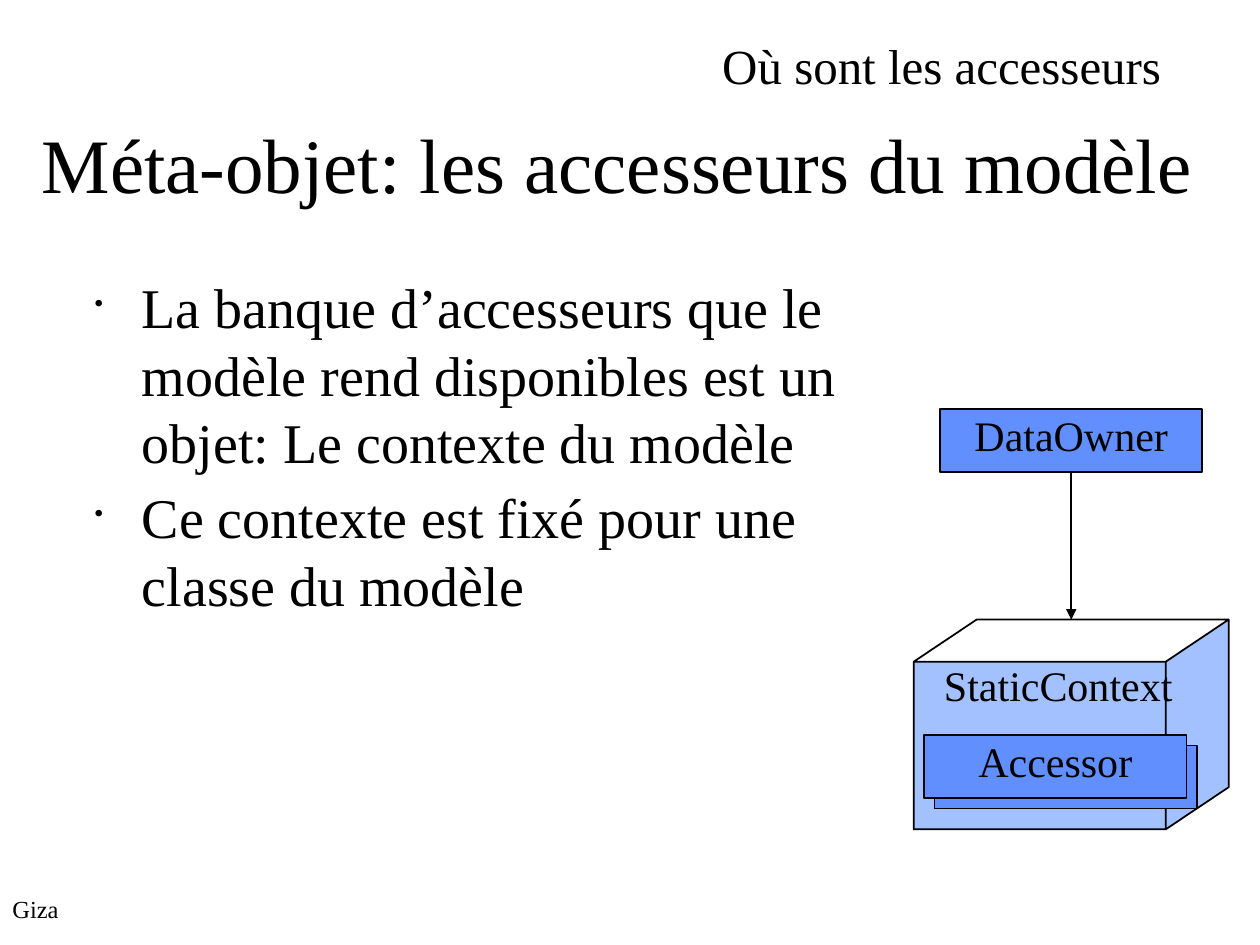
from dataclasses import dataclass

from lxml import etree
from pptx import Presentation
from pptx.dml.color import RGBColor
from pptx.enum.shapes import MSO_CONNECTOR, MSO_SHAPE
from pptx.enum.text import MSO_ANCHOR, PP_ALIGN
from pptx.oxml.ns import qn
from pptx.util import Cm, Pt

RECTANGLE = MSO_SHAPE.RECTANGLE
STRAIGHT = MSO_CONNECTOR.STRAIGHT
TOP = MSO_ANCHOR.TOP
LEFT, CENTER = PP_ALIGN.LEFT, PP_ALIGN.CENTER
BOTTOM_SIDE = 2


@dataclass(frozen=True)
class Theme:
    """Colours, font and type sizes of the slide."""
    font: str = "Times New Roman"
    ink: RGBColor = RGBColor(0x00, 0x00, 0x00)
    box_fill: RGBColor = RGBColor(0x61, 0x8F, 0xFD)
    cube_fill: RGBColor = RGBColor(0xA2, 0xC1, 0xFE)
    line: float = 1
    title: float = 44
    body: float = 32
    heading: float = 28
    label: float = 24
    footer: float = 14


THEME = Theme()
BOX_WIDTH, BOX_HEIGHT = 5.29, 1.27
BULLETS = (
    "La banque d’accesseurs que le modèle rend disponibles est un objet: Le contexte du modèle",
    "Ce contexte est fixé pour une classe du modèle",
)


def write_text(shape, lines, size, align=LEFT):
    """Fill a shape with paragraphs in the theme font."""
    frame = shape.text_frame
    frame.word_wrap = True
    frame.vertical_anchor = TOP
    frame.margin_left = frame.margin_right = 0
    frame.margin_top = frame.margin_bottom = 0
    frame.text = "\n".join(lines)
    for para in frame.paragraphs:
        para.alignment = align
        for span in para.runs:
            span.font.name = THEME.font
            span.font.size = Pt(size)
            span.font.color.rgb = THEME.ink


def add_text(page, left, top, width, height, lines, size):
    """Add a text box and return it."""
    box = page.shapes.add_textbox(Cm(left), Cm(top), Cm(width), Cm(height))
    write_text(box, lines, size)
    return box


def add_bullets(page, left, top, width, height, lines):
    """Add a bulleted list with hanging indents."""
    box = add_text(page, left, top, width, height, lines, THEME.body)
    for para in box.text_frame.paragraphs:
        para.space_before = Pt(4.8)
        properties = para._p.get_or_add_pPr()
        properties.set("marL", str(Cm(0.95)))
        properties.set("indent", str(-Cm(0.95)))
        colour = etree.SubElement(properties, qn("a:buClr"))
        etree.SubElement(colour, qn("a:srgbClr"), val=str(THEME.ink))
        etree.SubElement(properties, qn("a:buSzPct"), val="45000")
        etree.SubElement(properties, qn("a:buChar"), char="•")


def paint(shape, fill):
    """Give a shape a flat fill and the theme outline."""
    shape.shadow.inherit = False
    shape.fill.solid()
    shape.fill.fore_color.rgb = fill
    shape.line.color.rgb = THEME.ink
    shape.line.width = Pt(THEME.line)


def add_box(page, left, top, label=""):
    """Add a class box with an optional centred label."""
    box = page.shapes.add_shape(RECTANGLE, Cm(left), Cm(top), Cm(BOX_WIDTH), Cm(BOX_HEIGHT))
    paint(box, THEME.box_fill)
    if label:
        write_text(box, [label], THEME.label, CENTER)
    return box


def add_cube(page, left, top, width, height, depth, rise):
    """Draw a cube with filled front and side and an open top face."""
    right, bottom = left + width, top + height
    edge, front = right - depth, top + rise
    points = [
        (left, bottom), (edge, bottom), (right, bottom - rise), (right, top),
        (edge, front), (edge, bottom), (edge, front), (left, front),
        (left + depth, top), (right, top), (left + depth, top), (left, front),
    ]
    corners = [(Cm(x), Cm(y)) for x, y in points]
    builder = page.shapes.build_freeform(*corners[0])
    builder.add_line_segments(corners[1:], close=True)
    paint(builder.convert_to_shape(), THEME.cube_fill)


def add_arrow_down(page, source, end_y):
    """Draw an arrow from the bottom of a box down to a height."""
    middle = source.left + source.width // 2
    arrow = page.shapes.add_connector(
        STRAIGHT, middle, source.top + source.height, middle, Cm(end_y))
    arrow.begin_connect(source, BOTTOM_SIDE)
    arrow.line.color.rgb = THEME.ink
    arrow.line.width = Pt(THEME.line)
    etree.SubElement(arrow.line._get_or_add_ln(), qn("a:tailEnd"), type="triangle")
    etree.SubElement(arrow._element.spPr, qn("a:effectLst"))


def main():
    """Build the slide and save it."""
    deck = Presentation()
    deck.slide_width, deck.slide_height = Cm(25.4), Cm(19.05)
    page = deck.slides.add_slide(deck.slide_layouts[6])

    add_text(page, 0.25, 18.02, 1.45, 0.84, ["Giza"], THEME.footer)
    add_text(page, 0.84, 2.34, 24.33, 2.11, ["Méta-objet: les accesseurs du modèle"], THEME.title)
    add_bullets(page, 1.91, 5.5, 15.24, 12.7, BULLETS)
    add_text(page, 14.56, 0.71, 9.37, 1.45, ["Où sont les accesseurs"], THEME.heading)

    cube_top = 12.49
    owner = add_box(page, 18.95, 8.25, "DataOwner")
    add_arrow_down(page, owner, cube_top)
    add_cube(page, 18.42, cube_top, 6.35, 4.23, 1.27, 0.85)
    add_text(page, 19.03, 13.3, 5.13, 1.27, ["StaticContext"], THEME.label)

    for offset, label in ((0.21, ""), (0, "Accessor")):
        add_box(page, 18.63 + offset, 14.82 + offset, label)

    deck.save("out.pptx")


if __name__ == "__main__":
    main()
